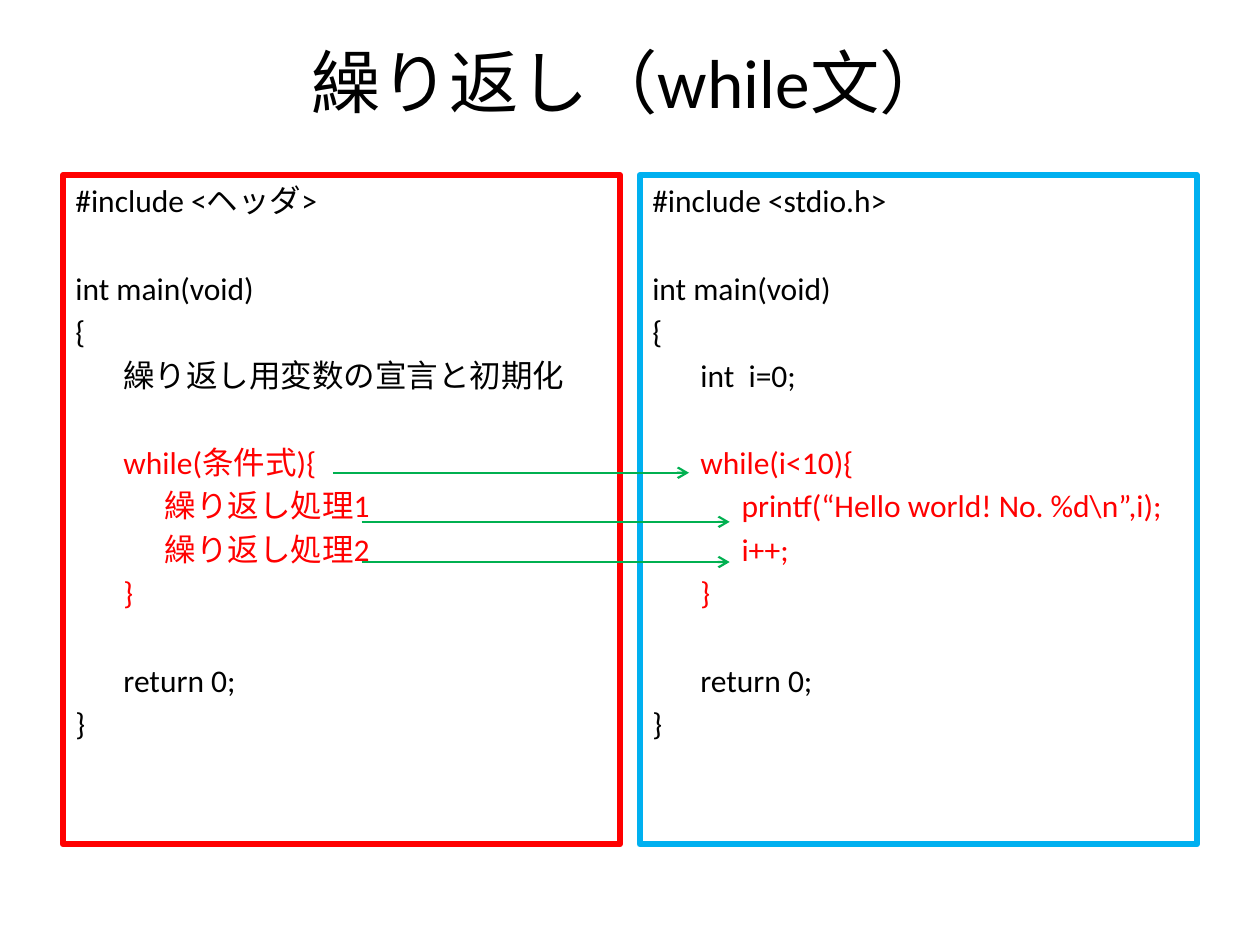
"""Build a slide that pairs the while-loop syntax with a worked example."""
from dataclasses import dataclass
from typing import NamedTuple

from lxml.etree import SubElement
from pptx import Presentation
from pptx.dml.color import RGBColor
from pptx.enum.shapes import MSO_CONNECTOR as Connector
from pptx.enum.text import MSO_ANCHOR as Anchor, PP_ALIGN as Align
from pptx.oxml.ns import qn
from pptx.util import Cm, Pt

BLACK = RGBColor(0x00, 0x00, 0x00)
RED = RGBColor(0xFF, 0x00, 0x00)
BLUE = RGBColor(0x00, 0xB0, 0xF0)
GREEN = RGBColor(0x00, 0xB0, 0x50)
FONT = "Calibri"
INDENTS = (Cm(0), Cm(0.97), Cm(1.8))
LINE_GAP = Pt(3.2)
SECTION_GAP = Pt(28.4)


class CodeLine(NamedTuple):
    text: str
    level: int = 0
    color: RGBColor = BLACK
    starts_section: bool = False


@dataclass
class Panel:
    left: float
    border: RGBColor
    header: str
    declaration: str
    condition: str
    steps: tuple[str, ...]

    def lines(self) -> list[CodeLine]:
        return [
            CodeLine(f"#include <{self.header}>"),
            CodeLine("int main(void)", starts_section=True),
            CodeLine("{"),
            CodeLine(self.declaration, 1),
            CodeLine(f"while({self.condition}){{", 1, RED, True),
            *(CodeLine(step, 2, RED) for step in self.steps),
            CodeLine("}", 1, RED),
            CodeLine("return 0;", 1, starts_section=True),
            CodeLine("}"),
        ]


class Arrow(NamedTuple):
    start: float
    end: float
    height: float


PANELS = (
    Panel(1.27, RED, "ヘッダ", "繰り返し用変数の宣言と初期化", "条件式",
          ("繰り返し処理1", "繰り返し処理2")),
    Panel(12.9, BLUE, "stdio.h", "int  i=0;", "i<10",
          ("printf(“Hello world! No. %d\\n”,i);", "i++;")),
)
ARROWS = (
    Arrow(7.29, 14.71, 10.52),
    Arrow(6.71, 13.89, 9.53),
    Arrow(7.29, 14.71, 11.33),
)


def format_text(para, size: float, color: RGBColor) -> None:
    for span in para.runs:
        span.font.name = FONT
        span.font.size = Pt(size)
        span.font.color.rgb = color


def draw_title(page, text: str) -> None:
    title = page.shapes.title
    title.left, title.top, title.width, title.height = Cm(1.27), Cm(0.76), Cm(22.86), Cm(1.75)
    title.text_frame.text = text
    title.text_frame.vertical_anchor = Anchor.MIDDLE
    para = title.text_frame.paragraphs[0]
    para.alignment = Align.CENTER
    format_text(para, 39.6, BLACK)


def draw_panel(page, panel: Panel) -> None:
    box = page.shapes.add_textbox(Cm(panel.left), Cm(3.53), Cm(11.23), Cm(13.49))
    box.line.color.rgb = panel.border
    box.line.width = Pt(3.5)
    frame = box.text_frame
    frame.word_wrap = True
    for index, line in enumerate(panel.lines()):
        para = frame.add_paragraph() if index else frame.paragraphs[0]
        para.text = line.text
        if index:
            para.space_before = SECTION_GAP if line.starts_section else LINE_GAP
        para._p.get_or_add_pPr().set("marL", str(INDENTS[line.level]))
        format_text(para, 18, line.color)


def draw_arrow(page, arrow: Arrow) -> None:
    connector = page.shapes.add_connector(
        Connector.STRAIGHT, Cm(arrow.start), Cm(arrow.height), Cm(arrow.end), Cm(arrow.height))
    connector.line.color.rgb = GREEN
    connector.line.width = Pt(1.25)
    SubElement(connector.line._get_or_add_ln(), qn("a:tailEnd"), type="arrow")
    SubElement(connector._element.spPr, qn("a:effectLst"))


def main() -> None:
    deck = Presentation()
    deck.slide_width, deck.slide_height = Cm(25.4), Cm(19.05)
    page = deck.slides.add_slide(deck.slide_layouts.get_by_name("Title Only"))
    draw_title(page, "繰り返し（while文）")
    for panel in PANELS:
        draw_panel(page, panel)
    for arrow in ARROWS:
        draw_arrow(page, arrow)
    deck.save("out.pptx")


if __name__ == "__main__":
    main()
